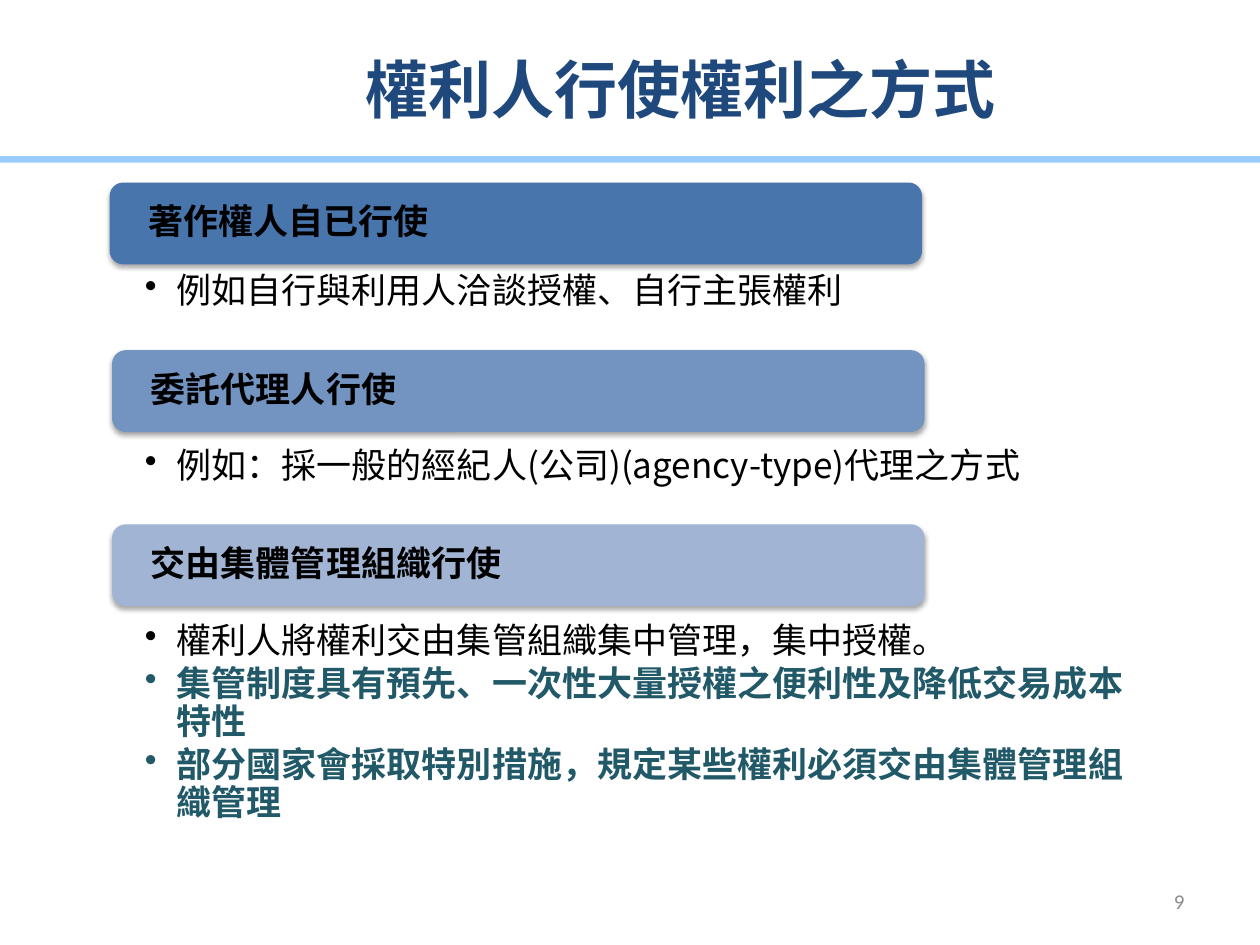
import pptx
import pptx.util
import pptx.dml.color
import pptx.enum.shapes
import pptx.enum.text
import pptx.oxml
import pptx.oxml.ns

Cm, Pt = pptx.util.Cm, pptx.util.Pt
RGBColor = pptx.dml.color.RGBColor
SHAPES = pptx.enum.shapes.MSO_SHAPE
ANCHOR = pptx.enum.text.MSO_ANCHOR
ALIGN = pptx.enum.text.PP_ALIGN

NAVY = RGBColor(0x1F, 0x49, 0x7D)
SKY = RGBColor(0x99, 0xCC, 0xFF)
GRAY = RGBColor(0x8C, 0x8C, 0x8C)
BLACK = RGBColor(0, 0, 0)
WHITE = RGBColor(0xFF, 0xFF, 0xFF)
TEAL = RGBColor(0x21, 0x59, 0x68)
CJK, LATIN = "Noto Sans CJK SC", "Calibri"

TITLE = "權利人行使權利之方式"
PAGE_NUMBER = "9"
# heading, heading colour, heading (left, top), details (top, height), details (text, emphasised)
SECTIONS = [
    ("著作權人自已行使", RGBColor(0x48, 0x75, 0xAC), (2.21, 3.68), (4.34, 2.41),
     [("例如自行與利用人洽談授權、自行主張權利", False)]),
    ("委託代理人行使", RGBColor(0x73, 0x93, 0xC1), (2.26, 7.06), (7.87, 2.41),
     [("例如：採一般的經紀人(公司)(agency-type)代理之方式", False)]),
    ("交由集體管理組織行使", RGBColor(0xA2, 0xB4, 0xD4), (2.26, 10.57), (11.4, 6.12),
     [("權利人將權利交由集管組織集中管理，集中授權。", False),
      ("集管制度具有預先、一次性大量授權之便利性及降低交易成本特性", True),
      ("部分國家會採取特別措施，規定某些權利必須交由集體管理組織管理", True)]),
]
DETAILS_LEFT, DETAILS_WIDTH = 1.09, 23.39
HEADING_WIDTH, HEADING_HEIGHT = 16.38, 1.65
BULLET_INDENT = Cm(0.64)


def xml(text):
    return pptx.oxml.parse_xml(text.replace(">", f" {pptx.oxml.ns.nsdecls('a')}>", 1))


def set_frame(frame, anchor, left, top, right, bottom):
    frame.word_wrap = True
    frame.vertical_anchor = anchor
    frame.margin_left, frame.margin_top = Cm(left), Cm(top)
    frame.margin_right, frame.margin_bottom = Cm(right), Cm(bottom)


def write(paragraph, text, size, color, bold=False, typeface=CJK, align=ALIGN.LEFT):
    paragraph.text = text
    paragraph.alignment = align
    font = paragraph.font
    font.size, font.bold, font.name = Pt(size), bold, typeface
    font.color.rgb = color
    latin = paragraph._p.pPr.find(".//" + pptx.oxml.ns.qn("a:latin"))
    latin.addnext(xml(f'<a:ea typeface="{typeface}"></a:ea>'))


def add_bullet(paragraph):
    properties = paragraph._p.get_or_add_pPr()
    properties.set("marL", str(BULLET_INDENT))
    properties.set("indent", str(-BULLET_INDENT))
    properties.append(xml('<a:buChar char="•"></a:buChar>'))


def add_filled(slide, kind, left, top, width, height, color):
    shape = slide.shapes.add_shape(kind, Cm(left), Cm(top), Cm(width), Cm(height))
    shape.shadow.inherit = False
    shape.fill.solid()
    shape.fill.fore_color.rgb = color
    shape.line.fill.background()
    return shape


def add_soft_shadow(shape):
    effects = shape._element.spPr.find(pptx.oxml.ns.qn("a:effectLst"))
    effects.append(xml(
        f'<a:outerShdw blurRad="{Pt(3.1)}" dist="{Pt(1.8)}" dir="5400000" rotWithShape="0">'
        '<a:srgbClr val="000000"><a:alpha val="35000"/></a:srgbClr></a:outerShdw>'))


def add_section(slide, heading, color, heading_at, details_span, details):
    top, height = details_span
    panel = add_filled(slide, SHAPES.RECTANGLE, DETAILS_LEFT, top, DETAILS_WIDTH, height, WHITE)
    set_frame(panel.text_frame, ANCHOR.TOP, 1.83, 1.17, 1.83, 0.41)
    for index, (text, emphasised) in enumerate(details):
        frame = panel.text_frame
        paragraph = frame.add_paragraph() if index else frame.paragraphs[0]
        paragraph.line_spacing = 0.9
        paragraph.space_after = Pt(3)
        add_bullet(paragraph)
        write(paragraph, text, 20, TEAL if emphasised else BLACK, emphasised)

    bar = add_filled(slide, SHAPES.ROUNDED_RECTANGLE, *heading_at,
                     HEADING_WIDTH, HEADING_HEIGHT, color)
    add_soft_shadow(bar)
    set_frame(bar.text_frame, ANCHOR.MIDDLE, 0.7, 0, 0.7, 0)
    label = bar.text_frame.paragraphs[0]
    label.line_spacing = 0.9
    write(label, heading, 20, BLACK, True)


def main():
    deck = pptx.Presentation()
    deck.slide_width, deck.slide_height = Cm(25.4), Cm(19.05)
    slide = deck.slides.add_slide(deck.slide_layouts[6])

    add_filled(slide, SHAPES.RECTANGLE, -0.1, 3.15, 25.55, 0.13, SKY)

    title = slide.shapes.add_textbox(Cm(7.11), Cm(1.12), Cm(17.45), Cm(2)).text_frame
    set_frame(title, ANCHOR.TOP, 0.25, 0.08, 0.25, 0.08)
    title.paragraphs[0].line_spacing = 0.9
    write(title.paragraphs[0], TITLE, 36, NAVY, True)

    for section in SECTIONS:
        add_section(slide, *section)

    number = slide.shapes.add_textbox(Cm(18.21), Cm(17.65), Cm(5.92), Cm(1.02)).text_frame
    set_frame(number, ANCHOR.MIDDLE, 0.25, 0.13, 0.25, 0.13)
    write(number.paragraphs[0], PAGE_NUMBER, 12, GRAY, typeface=LATIN, align=ALIGN.RIGHT)

    deck.save("out.pptx")


if __name__ == "__main__":
    main()
